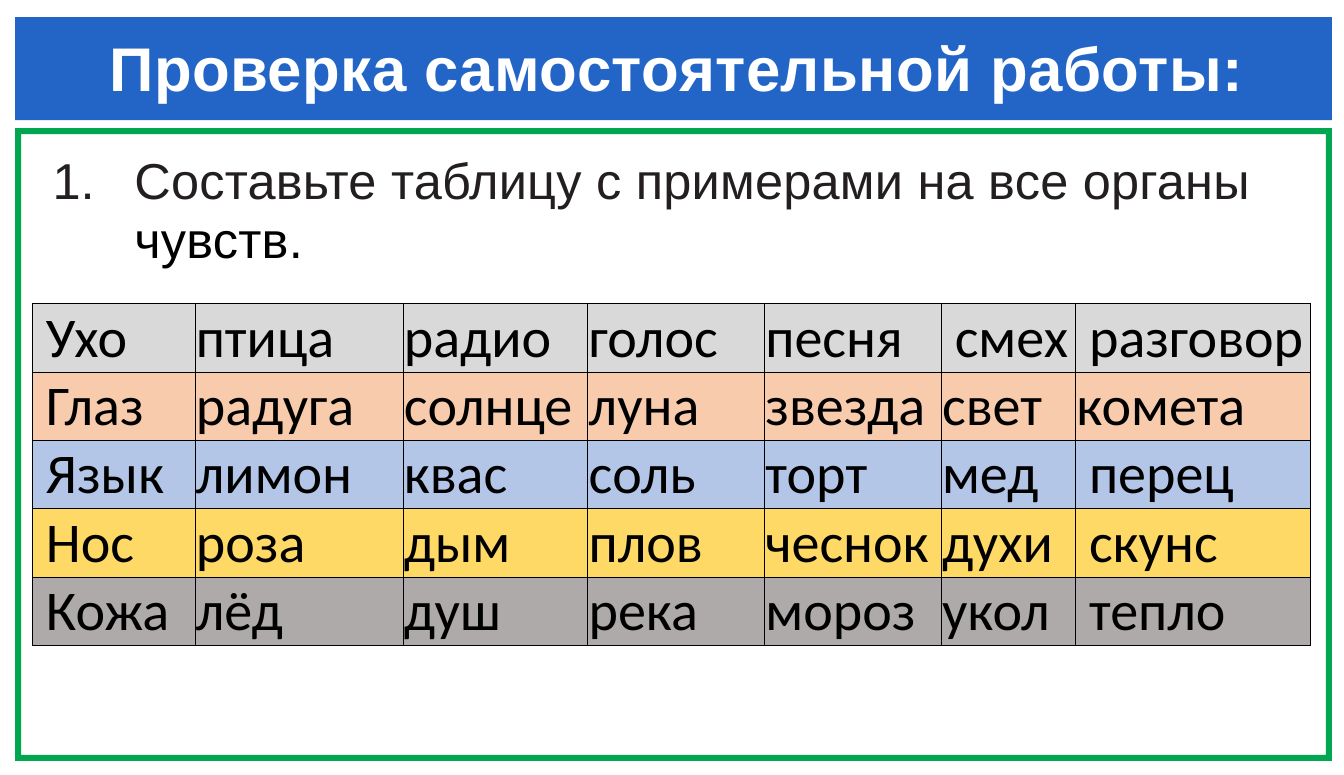
from lxml.etree import SubElement
from pptx import Presentation
from pptx.dml.color import RGBColor
from pptx.enum.shapes import MSO_SHAPE
from pptx.enum.text import MSO_ANCHOR, MSO_AUTO_SIZE, PP_ALIGN
from pptx.oxml import parse_xml
from pptx.oxml.ns import nsdecls, qn
from pptx.util import Emu, Inches, Pt

# Content
HEADING = "Проверка самостоятельной работы:"
TASK = [("Составьте таблицу с примерами на все органы ", "231F20"),
        ("чувств.", "000000")]
SENSES = [
    ("D9D9D9", [" Ухо", "птица", "радио", "голос", "песня", " смех", " разговор"]),
    ("F8CBAD", [" Глаз", "радуга", "солнце", "луна", "звезда", "свет", "комета"]),
    ("B4C6E7", [" Язык", "лимон", "квас", "соль", "торт", "мед", " перец"]),
    ("FFD966", [" Нос", "роза", "дым", "плов", "чеснок", "духи", " скунс"]),
    ("AEAAAA", [" Кожа", "лёд", "душ", "река", "мороз", "укол", " тепло"]),
]

# Slide size in EMU, grid in inches
SLIDE_W, SLIDE_H = Emu(12169775), Emu(7021513)
LEFT, WIDTH = 0.15, 13.04
BANNER_TOP, BANNER_H = 0.17, 1.02
FRAME_TOP, FRAME_H, FRAME_EDGE = 1.27, 6.27, 0.06
TABLE_W, TABLE_H = 12.68, 3.39
COLUMNS = [1.61, 2.06, 1.83, 1.75, 1.75, 1.33, 2.33]
ROWS = [0.67] + [0.59] * 4
CELL_PAD = 0.01


def color(hex_string):
    return RGBColor.from_string(hex_string)


def add_block(kind, top, height, fill):
    block = slide.shapes.add_shape(kind, Inches(LEFT), Inches(top),
                                   Inches(WIDTH), Inches(height))
    block.shadow.inherit = False
    block.fill.solid()
    block.fill.fore_color.rgb = color(fill)
    block.line.fill.background()
    return block


def set_insets(frame, top):
    frame.word_wrap = True
    frame.auto_size = MSO_AUTO_SIZE.NONE
    frame.vertical_anchor = MSO_ANCHOR.TOP
    frame.margin_left = frame.margin_right = frame.margin_bottom = 0
    frame.margin_top = Inches(top)


def set_indent(paragraph, margin, first_line):
    properties = paragraph._p.get_or_add_pPr()
    properties.set("marL", str(Inches(margin)))
    properties.set("indent", str(Inches(first_line)))
    return properties


def add_run(paragraph, text, fill, spacing):
    run = paragraph.add_run()
    run.text = text
    run.font.color.rgb = color(fill)
    run._r.get_or_add_rPr().set("spc", str(spacing))


def add_borders(cell):
    properties = cell._tc.get_or_add_tcPr()
    for position, side in enumerate(("lnL", "lnR", "lnT", "lnB")):
        properties.insert(position, parse_xml(
            f'<a:{side} {nsdecls("a")} w="{Pt(0.5)}"><a:solidFill>'
            f'<a:srgbClr val="000000"/></a:solidFill></a:{side}>'))


presentation = Presentation()
presentation.slide_width, presentation.slide_height = SLIDE_W, SLIDE_H
presentation.element.find(qn("p:sldSz")).attrib.pop("type", None)
slide = presentation.slides.add_slide(presentation.slide_layouts[5])

# Banner with the title in front of it
banner = add_block(MSO_SHAPE.RECTANGLE, BANNER_TOP, BANNER_H, "2365C7")
title = slide.shapes.title
banner.element.addnext(title.element)
title.left, title.top = Inches(0.4), Inches(0.26)
title.width, title.height = Inches(12.58), Inches(0.78)
set_insets(title.text_frame, 0.04)
heading = title.text_frame.paragraphs[0]
heading.alignment = PP_ALIGN.CENTER
heading.space_before = Pt(2.8)
heading.font.name, heading.font.size, heading.font.bold = "Arial", Pt(44), True
set_indent(heading, 0.03, 0)
add_run(heading, HEADING, "FFFFFF", 30)

# Numbered task
task_box = slide.shapes.add_textbox(Inches(0.49), Inches(1.42), Inches(12.27), Inches(1.25))
set_insets(task_box.text_frame, 0.07)
task = task_box.text_frame.paragraphs[0]
task.line_spacing, task.space_before = Pt(42.2), Pt(5)
task.font.name, task.font.size = "Arial", Pt(36)
for words, fill in TASK:
    add_run(task, words, fill, 20)
numbering = set_indent(task, 0.84, -0.81)
bullet = SubElement(numbering, qn("a:buAutoNum"), type="arabicPeriod")
numbering.find(qn("a:defRPr")).addprevious(bullet)

# Green frame
green_frame = add_block(MSO_SHAPE.FRAME, FRAME_TOP, FRAME_H, "00A650")
green_frame.adjustments[0] = FRAME_EDGE / FRAME_H

# Table of the senses
senses_frame = slide.shapes.add_table(
    len(ROWS), len(COLUMNS), Inches(0.32), Inches(3.01),
    Inches(TABLE_W), Inches(TABLE_H))
senses = senses_frame.table
senses.first_row = senses.horz_banding = False
for column, width in zip(senses.columns, COLUMNS):
    column.width = Inches(width)
for row, height in zip(senses.rows, ROWS):
    row.height = Inches(height)
senses_frame.width, senses_frame.height = Inches(TABLE_W), Inches(TABLE_H)
for row, (fill, examples) in zip(senses.rows, SENSES):
    for cell, example in zip(row.cells, examples):
        cell.margin_left = cell.margin_right = Inches(CELL_PAD)
        cell.margin_top = cell.margin_bottom = Emu(0)
        cell.vertical_anchor = MSO_ANCHOR.BOTTOM
        cell.fill.solid()
        cell.fill.fore_color.rgb = color(fill)
        add_borders(cell)
        cell.text = example
        font = cell.text_frame.paragraphs[0].font
        font.name, font.size = "Calibri", Pt(40)
        font.color.rgb = color("000000")

presentation.save("out.pptx")
